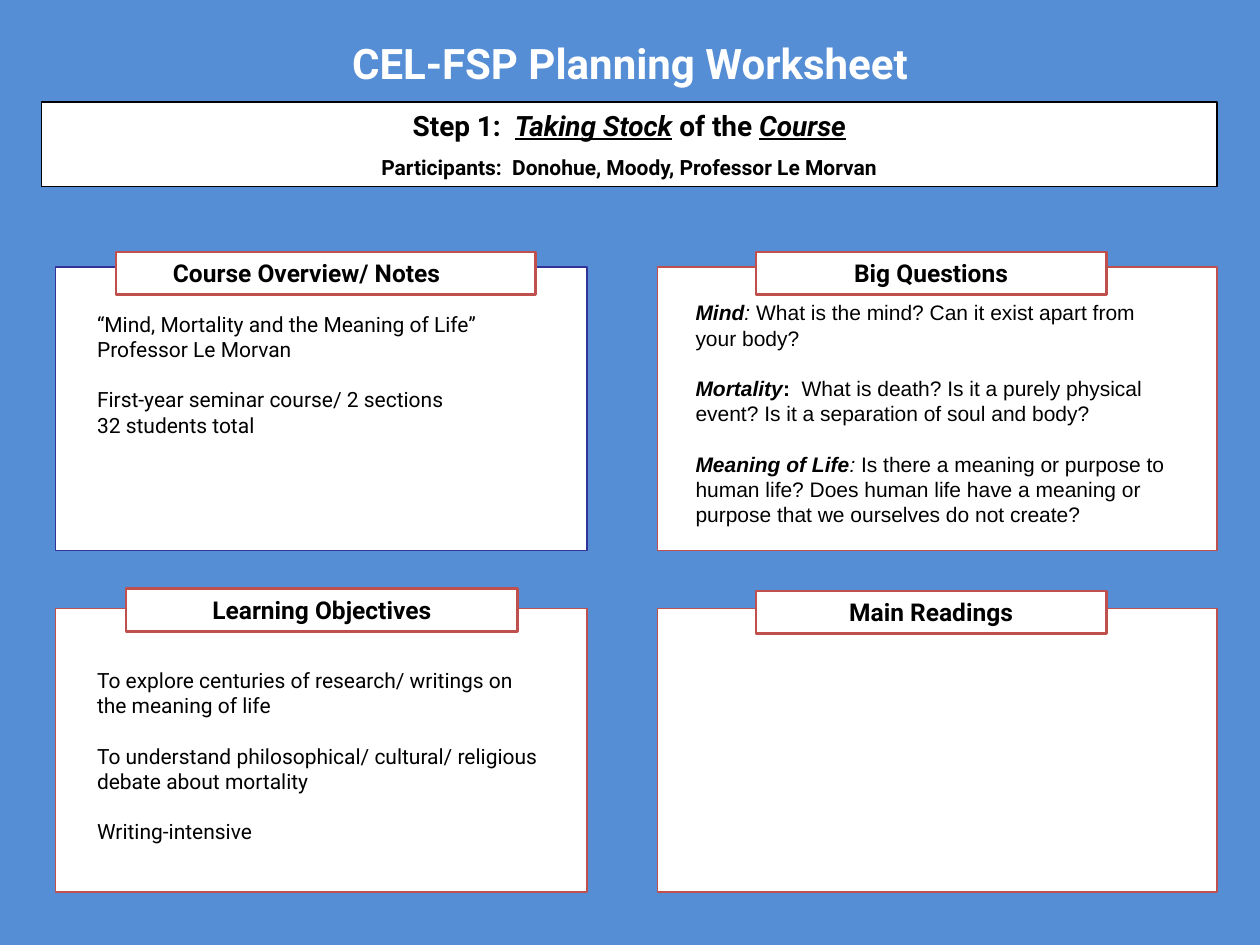
from pptx import Presentation
from pptx.dml.color import RGBColor
from pptx.enum.shapes import MSO_SHAPE
from pptx.enum.text import MSO_ANCHOR, MSO_AUTO_SIZE, PP_ALIGN
from pptx.oxml.ns import qn
from pptx.util import Inches, Pt

COLORS = {"sky": "558ED5", "white": "FFFFFF", "black": "000000",
          "red": "C0504D", "navy": "333399"}
STYLES = {"b": "bold", "i": "italic", "u": "underline"}
TITLE = "CEL-FSP Planning Worksheet"
BANNER = [
    [("Step 1:  ", "b"), ("Taking Stock", "biu"), (" of the ", "b"), ("Course", "biu")],
    [("Participants:  Donohue, Moody, Professor Le Morvan", "b")],
]
OVERVIEW = [
    [("“Mind, Mortality and the Meaning of Life”", "")],
    [("Professor Le Morvan", "")],
    [("First-year seminar course/ 2 sections", "")],
    [("32 students total", "")],
]
QUESTIONS = [
    [("Mind", "bi"), (":", "i"),
     (" What is the mind? Can it exist apart from your body?", "")],
    [("Mortality", "bi"), (":", "b"),
     ("  What is death? Is it a purely physical event? "
      "Is it a separation of soul and body?", "")],
    [("Meaning of Life", "bi"), (": ", "i"),
     ("Is there a meaning or purpose to human life? Does human life have "
      "a meaning or purpose that we ourselves do not create?", "")],
]
OBJECTIVES = [
    [("To explore centuries of research/ writings on the meaning of life", "")],
    [("To understand philosophical/ cultural/ religious debate about mortality", "")],
    [("Writing-intensive", "")],
]
LEFT, RIGHT = (0.44, 4.22), (5.22, 4.44)
UPPER, LOWER, PANEL_HEIGHT = 2.12, 4.83, 2.25


def color(key):
    """Return the named palette colour."""
    return RGBColor.from_string(COLORS[key])


def place(shape, box):
    """Move a shape to a box of left, top, width and height in inches."""
    for side, length in zip(("left", "top", "width", "height"), box):
        setattr(shape, side, Inches(length))


def write(shape, paragraphs, sizes, gaps, font="Roboto", ink="black",
          align=PP_ALIGN.CENTER):
    """Write styled runs, one size and one gap before for each paragraph."""
    frame = shape.text_frame
    settings = {"word_wrap": True, "auto_size": MSO_AUTO_SIZE.NONE,
                "vertical_anchor": MSO_ANCHOR.TOP}
    for key, value in settings.items():
        setattr(frame, key, value)
    for index, (runs, size, gap) in enumerate(zip(paragraphs, sizes, gaps)):
        paragraph = frame.add_paragraph() if index else frame.paragraphs[0]
        layout = {"alignment": align, "space_before": Pt(gap), "line_spacing": 1.0}
        for key, value in layout.items():
            setattr(paragraph, key, value)
        properties = paragraph._p.get_or_add_pPr()
        properties.set("marL", "0")
        properties.set("indent", "0")
        properties.append(properties.makeelement(qn("a:buNone"), {}))
        for text, style in runs:
            run = paragraph.add_run()
            run.text = text
            look = {"name": font, "size": Pt(size)}
            look.update({name: key in style for key, name in STYLES.items()})
            for key, value in look.items():
                setattr(run.font, key, value)
            run.font.color.rgb = color(ink)


def add_frame(slide, box, border, weight):
    """Add a white rectangle with a coloured border."""
    frame = slide.shapes.add_shape(MSO_SHAPE.RECTANGLE, *map(Inches, box))
    frame.shadow.inherit = False
    frame.fill.solid()
    frame.fill.fore_color.rgb = color("white")
    frame.line.color.rgb = color(border)
    frame.line.width = Pt(weight)
    return frame


def add_header(slide, title_box, banner_box):
    """Place the worksheet title and the step banner."""
    title = slide.shapes.title
    place(title, title_box)
    write(title, [[(TITLE, "b")]], [24], [0], ink="white")
    banner = add_frame(slide, banner_box, "black", 1)
    write(banner, BANNER, [16, 12], [0, 7])


def add_panel(slide, box, heading, heading_box, border="red", right_inset=0.1):
    """Place a panel with its heading label on the top edge."""
    add_frame(slide, box, border, 0.75)
    label = add_frame(slide, heading_box, "red", 1.5)
    label.text_frame.margin_right = Inches(right_inset)
    write(label, [[(heading, "b")]], [14], [0])


def fill_panel(slide, body, box, paragraphs, gaps, font="Roboto"):
    """Place a body placeholder over its panel and write its text."""
    place(body, box)
    write(body, paragraphs, [12] * len(paragraphs), gaps, font, align=PP_ALIGN.LEFT)
    slide.shapes._spTree.append(body._element)


def main():
    """Build and save the worksheet slide."""
    deck = Presentation()
    deck.slide_width, deck.slide_height = Inches(10), Inches(7.5)
    slide = deck.slides.add_slide(deck.slide_layouts[4])
    slide.background.fill.solid()
    slide.background.fill.fore_color.rgb = color("sky")
    overview, objectives, spare, questions = list(slide.placeholders)[1:5]
    spare._element.getparent().remove(spare._element)

    add_header(slide, (0, 0.25, 10, 0.51), (0.33, 0.81, 9.33, 0.67))
    for (left, width), top, heading, heading_box, extras in (
        (RIGHT, LOWER, "Main Readings", (6, 4.69, 2.78, 0.34), {}),
        (LEFT, LOWER, "Learning Objectives", (1, 4.67, 3.11, 0.34), {}),
        (RIGHT, UPPER, "Big Questions", (6, 2, 2.78, 0.34), {}),
        (LEFT, UPPER, "Course Overview/ Notes", (0.92, 2, 3.33, 0.34),
         {"border": "navy", "right_inset": 0.4}),
    ):
        add_panel(slide, (left, top, width, PANEL_HEIGHT), heading, heading_box, **extras)

    line = 14.4
    fill_panel(slide, overview, (0.67, 2.42, 3.75, 1.51), OVERVIEW, [0, 0, line, 0])
    fill_panel(slide, questions, (5.42, 2.33, 4, 2.12), QUESTIONS, [0, line, line], "Arial")
    fill_panel(slide, objectives, (0.67, 5.25, 3.75, 1.92), OBJECTIVES, [0, line, line])
    deck.save("out.pptx")


if __name__ == "__main__":
    main()
